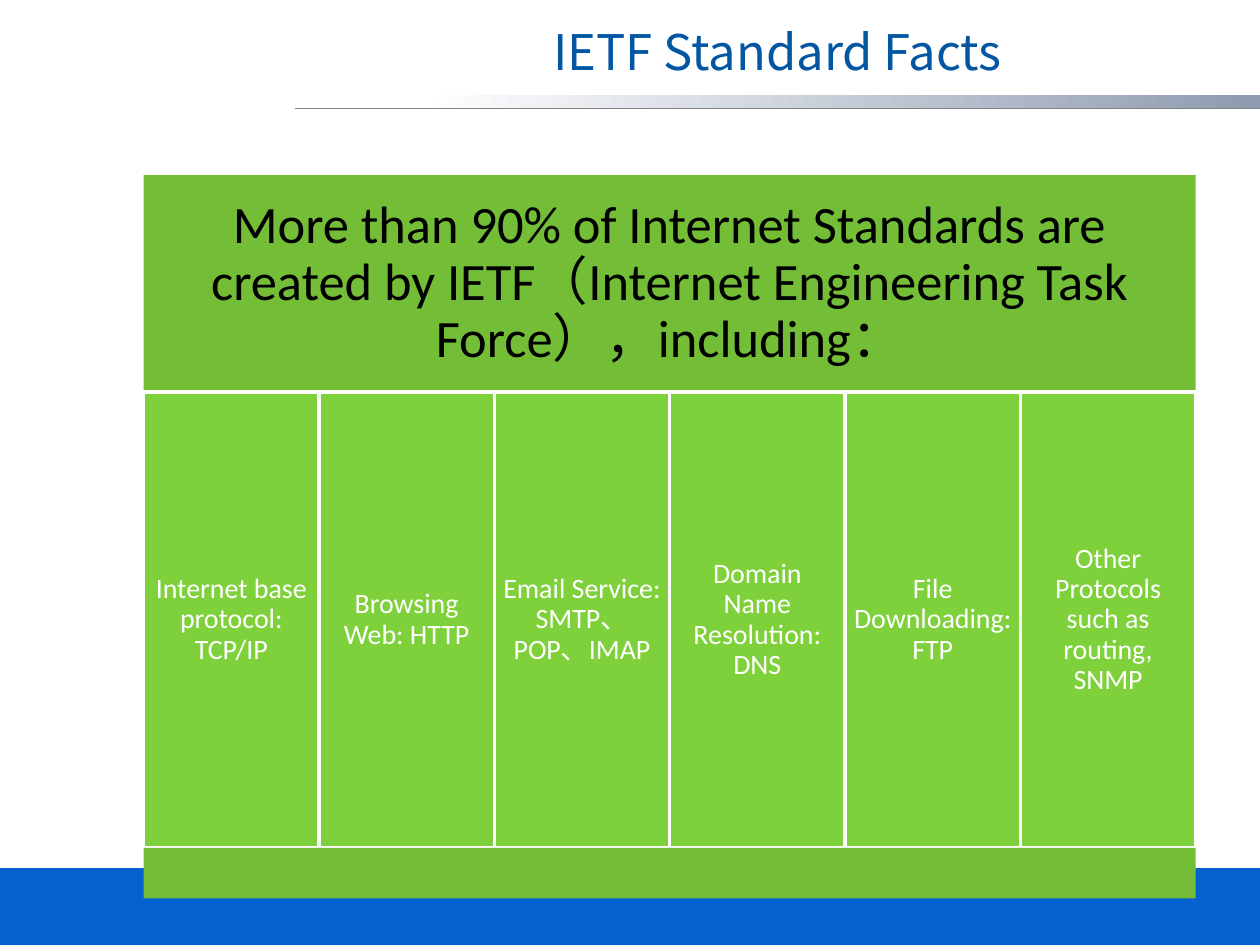
from pptx import Presentation
from pptx.dml.color import RGBColor
from pptx.enum.shapes import MSO_CONNECTOR as CONN, MSO_SHAPE as SHAPE
from pptx.enum.text import MSO_ANCHOR as ANCHOR, PP_ALIGN as ALIGN
from pptx.oxml.ns import qn
from pptx.util import Inches, Pt
from lxml.etree import SubElement

TITLE = "IETF Standard Facts"
HEADING = ("More than 90% of Internet Standards are created by IETF"
           "（Internet Engineering Task Force），including：")
PROTOCOLS = [
    "Internet base protocol: TCP/IP",
    "Browsing Web: HTTP",
    "Email Service: SMTP、POP、IMAP",
    "Domain Name Resolution: DNS",
    "File Downloading: FTP",
    "Other Protocols such as routing, SNMP",
]
LEFT, WIDTH = 1.14, 8.35
HEAD_TOP, COL_TOP, FOOT_TOP, FOOT_H = 1.39, 3.11, 6.73, 0.4
DARK, LIGHT, WHITE = "73BE36", "7FD13B", "FFFFFF"


def rgb(value):
    return RGBColor.from_string(value)


def put_text(sp, text, color, inset, **font):
    tf = sp.text_frame
    tf.word_wrap = True
    tf.vertical_anchor = ANCHOR.MIDDLE
    for side in ("left", "top", "right", "bottom"):
        setattr(tf, f"margin_{side}", Inches(inset))
    p = tf.paragraphs[0]
    p.alignment = ALIGN.CENTER
    p.line_spacing = 0.9
    r = p.add_run()
    r.text = text
    for name, value in font.items():
        setattr(r.font, name, value)
    r.font.color.rgb = rgb(color)


def add_box(s, x, y, w, h, fill=None, line=None):
    sp = s.shapes.add_shape(SHAPE.RECTANGLE, *map(Inches, (x, y, w, h)))
    sp.shadow.inherit = False
    if fill:
        sp.fill.solid()
        sp.fill.fore_color.rgb = rgb(fill)
    if line:
        sp.line.color.rgb = rgb(line)
        sp.line.width = Pt(2)
    else:
        sp.line.fill.background()
    return sp


def add_frame(s):
    band = add_box(s, 2.42, 0.75, 7.58, 0.11)
    band.fill.gradient()
    band.fill.gradient_angle = 180
    stops = [("8E9BB0", 0), (WHITE, 0.88)]
    for stop, (color, position) in zip(band.fill.gradient_stops, stops):
        stop.color.rgb = rgb(color)
        stop.position = position
    add_box(s, 0, 6.89, 10, 0.61, "0661D0")
    rule = s.shapes.add_connector(CONN.STRAIGHT, *map(Inches, (10, 0.86, 2.34, 0.86)))
    rule.line.color.rgb = rgb("808080")
    rule.line.width = Pt(0.75)
    SubElement(rule._element.spPr, qn("a:effectLst"))


def add_title(s):
    title = s.shapes.title
    place = dict(left=2.34, top=0, width=7.66, height=0.86)
    for name, value in place.items():
        setattr(title, name, Inches(value))
    put_text(title, TITLE, "0256A2", 0.05, size=Pt(28), name="Noto Sans CJK SC")


def add_table_list(s):
    head = add_box(s, LEFT, HEAD_TOP, WIDTH, COL_TOP - HEAD_TOP, DARK)
    put_text(head, HEADING, "000000", 0.12, size=Pt(30), name="Calibri")
    col_w = WIDTH / len(PROTOCOLS)
    for i, text in enumerate(PROTOCOLS):
        col = add_box(s, LEFT + i * col_w, COL_TOP, col_w, FOOT_TOP - COL_TOP, LIGHT, WHITE)
        put_text(col, text, WHITE, 0.07, size=Pt(16), name="Calibri")
    add_box(s, LEFT, FOOT_TOP, WIDTH, FOOT_H, DARK)


def main():
    prs = Presentation()
    prs.slide_width, prs.slide_height = Inches(10), Inches(7.5)
    s = prs.slides.add_slide(prs.slide_layouts[5])
    add_frame(s)
    add_title(s)
    add_table_list(s)
    prs.save("out.pptx")


if __name__ == "__main__":
    main()
